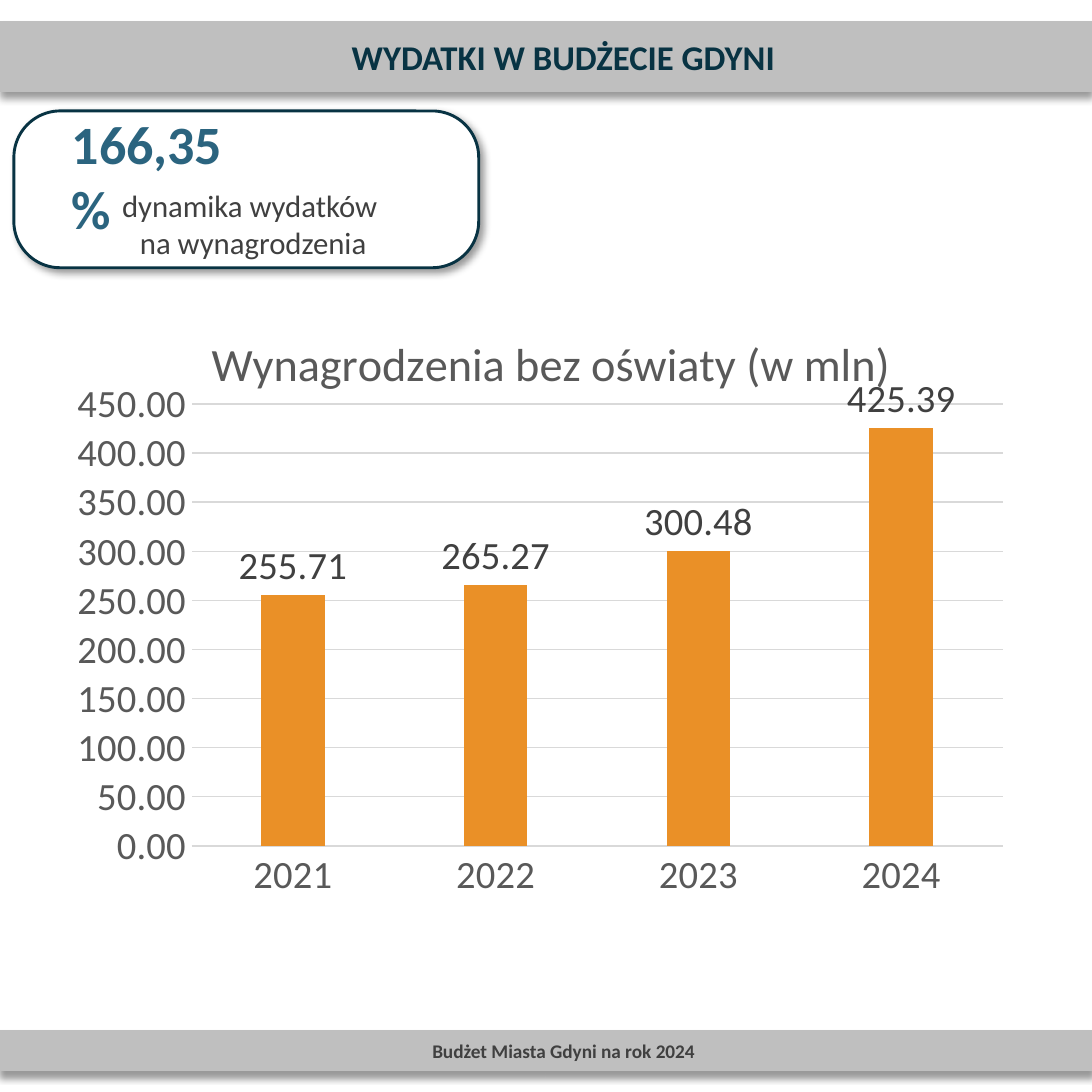
from dataclasses import dataclass

from lxml import etree
from pptx import Presentation
from pptx.chart.data import CategoryChartData
from pptx.dml.color import RGBColor
from pptx.enum.chart import XL_CHART_TYPE as ChartType
from pptx.enum.chart import XL_LABEL_POSITION as LabelPosition
from pptx.enum.chart import XL_TICK_MARK as TickMark
from pptx.enum.shapes import MSO_SHAPE as Shape
from pptx.enum.text import MSO_ANCHOR as Anchor
from pptx.enum.text import MSO_AUTO_SIZE as AutoSize
from pptx.enum.text import PP_ALIGN as Align
from pptx.oxml import parse_xml
from pptx.oxml.ns import nsdecls, qn
from pptx.util import Inches, Pt


@dataclass(frozen=True)
class Theme:
    font: str = "Calibri"
    white: str = "FFFFFF"
    band: str = "BFBFBF"
    navy: str = "083343"
    teal: str = "2B647F"
    text: str = "404040"
    axis: str = "595959"
    grid: str = "D9D9D9"
    bar: str = "EA9027"
    footer_size: int = 10
    note_size: int = 16
    heading_size: int = 18
    chart_size: int = 20
    chart_title_size: int = 24
    figure_size: int = 28


THEME = Theme()


def rgb(color):
    return RGBColor.from_string(color)


def set_font(font, size, color, bold=False):
    font.name, font.size, font.bold = THEME.font, Pt(size), bold
    font.color.rgb = rgb(color)


def place(shape, box):
    shape.left, shape.top, shape.width, shape.height = map(Inches, box)


def style_panel(shape, fill, line, width, shadow_angle):
    """Fill, outline and soft shadow of a panel."""
    shape.fill.solid()
    shape.fill.fore_color.rgb = rgb(fill)
    shape.line.color.rgb = rgb(line)
    shape.line.width = Pt(width)
    shape.shadow.inherit = False
    effects = shape._element.spPr.find(qn("a:effectLst"))
    effects.append(parse_xml(
        f'<a:outerShdw {nsdecls("a")} blurRad="{Pt(4)}" dist="{Pt(3)}" '
        f'dir="{shadow_angle * 60000}" algn="t" rotWithShape="0">'
        '<a:srgbClr val="000000"><a:alpha val="40000"/></a:srgbClr></a:outerShdw>'))


def write_lines(frame, lines, size, color, bold=False, align=Align.LEFT):
    frame.word_wrap = True
    frame.text = "\n".join(lines)
    for paragraph in frame.paragraphs:
        paragraph.alignment = align
        set_font(paragraph.font, size, color, bold)


def fill_band(band, box, label, size, color):
    """Grey full-width band with a centred label."""
    place(band, box)
    style_panel(band, THEME.band, THEME.band, 1, 90)
    frame = band.text_frame
    write_lines(frame, [label], size, color, True, Align.CENTER)
    frame.auto_size = AutoSize.NONE
    frame.vertical_anchor = Anchor.MIDDLE
    frame.margin_left, frame.margin_right = Inches(0.35), Inches(0.1)
    frame.margin_top = frame.margin_bottom = Inches(0.05)


def add_growth_card(slide, box):
    """Rounded card with the growth figure and its caption."""
    left, top, width, height = box
    parts = slide.shapes.add_group_shape().shapes
    card = parts.add_shape(Shape.ROUNDED_RECTANGLE, *map(Inches, box))
    card.adjustments[0] = 0.296
    style_panel(card, THEME.white, THEME.navy, 1.5, 45)

    figure = parts.add_textbox(
        *map(Inches, (left + 0.32, top - 0.05, 1.5, 0.57)))
    write_lines(figure.text_frame, ["166,35 %"], THEME.figure_size, THEME.teal, True)

    caption = parts.add_textbox(
        *map(Inches, (left, top + 0.5, width + 0.1, height - 0.49)))
    write_lines(caption.text_frame, ["dynamika wydatków ", "na wynagrodzenia"],
                THEME.note_size, THEME.text, align=Align.CENTER)


def set_layout(parent, after, **values):
    """Fixed position inside the chart, as fractions of its size."""
    for old in parent.findall(qn("c:layout")):
        parent.remove(old)
    layout = etree.Element(qn("c:layout"))
    manual = etree.SubElement(layout, qn("c:manualLayout"))
    for tag, value in values.items():
        etree.SubElement(manual, qn(f"c:{tag}")).set("val", str(value))
    if after is None:
        parent.insert(0, layout)
    else:
        after.addnext(layout)


def add_wages_chart(slide, box):
    """Column chart of wages by year."""
    data = CategoryChartData(number_format="0.00")
    data.categories = ["2021", "2022", "2023", "2024"]
    data.add_series("Wynagrodzenia", (255.71, 265.27, 300.48, 425.39))
    chart = slide.shapes.add_chart(
        ChartType.COLUMN_CLUSTERED, *map(Inches, box), data).chart
    set_font(chart.font, THEME.chart_size, THEME.axis)
    chart.has_legend = False

    # Title
    chart.has_title = True
    title = chart.chart_title
    title.include_in_layout = False
    title.text_frame.text = "Wynagrodzenia bez oświaty (w mln)"
    set_font(title.text_frame.paragraphs[0].font, THEME.chart_title_size, THEME.axis)
    title_xml = title._element
    set_layout(title_xml, title_xml.find(qn("c:tx")),
               xMode="edge", yMode="edge", x=0.15, y=0.06)
    plot_area = chart._chartSpace.chart.plotArea
    set_layout(plot_area, None, layoutTarget="inner", xMode="edge", yMode="edge",
               x=0.138, y=0.187, w=0.84, h=0.708)

    # Axes
    years, amounts = chart.category_axis, chart.value_axis
    for axis in (years, amounts):
        axis.major_tick_mark = axis.minor_tick_mark = TickMark.NONE
        set_font(axis.tick_labels.font, THEME.chart_size, THEME.axis)
    amounts.minimum_scale, amounts.maximum_scale, amounts.major_unit = 0, 450, 50
    amounts.tick_labels.number_format = "0.00"
    amounts.tick_labels.number_format_is_linked = False
    amounts.format.line.fill.background()
    for line in (years.format.line, amounts.major_gridlines.format.line):
        line.color.rgb = rgb(THEME.grid)
        line.width = Pt(0.75)

    # Columns and their values
    plot = chart.plots[0]
    plot.gap_width, plot.overlap = 219, -27
    plot.vary_by_categories = False
    wages = plot.series[0]
    wages.format.fill.solid()
    wages.format.fill.fore_color.rgb = rgb(THEME.bar)
    labels = wages.data_labels
    labels.show_value = True
    labels.position = LabelPosition.OUTSIDE_END
    labels.number_format = "0.00"
    labels.number_format_is_linked = False
    set_font(labels.font, THEME.chart_size, THEME.text)


def build_budget_slide(deck):
    slide = deck.slides.add_slide(deck.slide_layouts[5])
    page_width = deck.slide_width / Inches(1)
    fill_band(slide.shapes.title, (0, 0.16, page_width, 0.5),
              "WYDATKI W BUDŻECIE GDYNI", THEME.heading_size, THEME.navy)
    footer = slide.shapes.add_shape(Shape.RECTANGLE, 0, 0, 0, 0)
    fill_band(footer, (0, 7.43, page_width, 0.28),
              "Budżet Miasta Gdyni na rok 2024", THEME.footer_size, THEME.text)
    add_growth_card(slide, (0.1, 0.8, 3.35, 1.13))
    add_wages_chart(slide, (0.42, 2.07, 6.96, 4.5))


def main():
    deck = Presentation()
    deck.slide_width = deck.slide_height = Inches(7.87)
    build_budget_slide(deck)
    deck.save("out.pptx")


if __name__ == "__main__":
    main()
